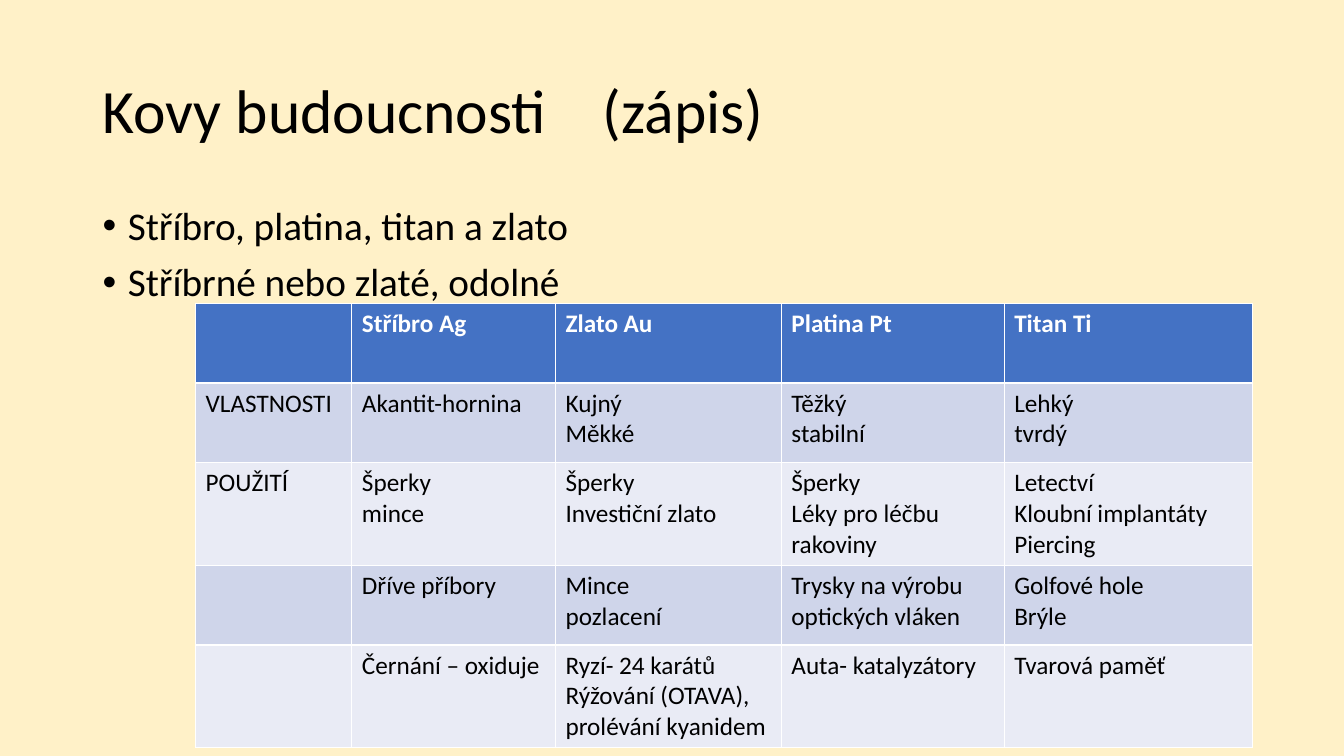
from dataclasses import dataclass

from lxml.etree import SubElement
from pptx import Presentation
from pptx.dml.color import RGBColor
from pptx.enum.text import MSO_ANCHOR
from pptx.oxml.ns import qn
from pptx.util import Inches, Pt

TITLE = "Kovy budoucnosti\t(zápis)"
POINTS = ["Stříbro, platina, titan a zlato", "Stříbrné nebo zlaté, odolné"]
METALS = [
    ["", "Stříbro Ag", "Zlato Au", "Platina Pt", "Titan Ti"],
    ["VLASTNOSTI", "Akantit-hornina", "Kujný\nMěkké", "Těžký\nstabilní", "Lehký\ntvrdý"],
    ["POUŽITÍ", "Šperky\nmince", "Šperky\nInvestiční zlato",
     "Šperky\nLéky pro léčbu rakoviny", "Letectví\nKloubní implantáty\nPiercing"],
    ["", "Dříve příbory", "Mince\npozlacení",
     "Trysky na výrobu optických vláken", "Golfové hole\nBrýle"],
    ["", "Černání – oxiduje", "Ryzí- 24 karátů\nRýžování (OTAVA), prolévání kyanidem",
     "Auta- katalyzátory", "Tvarová paměť"],
]
COLUMNS = [1.55, 2.02, 2.24, 2.21, 2.46]
ROWS = [0.79, 0.79, 1.02, 0.79, 1.02]
TABLE_LEFT, TABLE_TOP = 1.94, 3.01
MARGIN, CONTENT_WIDTH = 0.92, 11.5
INDENT, TITLE_TAB = 0.25, 4.96


@dataclass(frozen=True)
class Theme:
    font: str = "Calibri"
    title: int = 44
    point: int = 28
    cell: int = 18
    background: str = "FFF1C8"
    ink: str = "000000"
    header: str = "4472C4"
    header_ink: str = "FFFFFF"
    bands: tuple = ("E9EBF5", "CFD5EA")


THEME = Theme()


def style(paragraph, size, color, bold=False):
    font = paragraph.font
    font.name, font.size, font.bold = THEME.font, Pt(size), bold
    font.color.rgb = RGBColor.from_string(color)


def add_text(slide, top, height, lines, anchor):
    frame = slide.shapes.add_textbox(
        Inches(MARGIN), Inches(top), Inches(CONTENT_WIDTH), Inches(height)).text_frame
    frame.word_wrap = True
    frame.vertical_anchor = anchor
    frame.text = "\n".join(lines)
    for paragraph in frame.paragraphs:
        paragraph.line_spacing = 0.9
    return frame.paragraphs


def add_title(slide):
    heading = add_text(slide, 0.4, 1.45, [TITLE], MSO_ANCHOR.MIDDLE)[0]
    stops = SubElement(heading._p.get_or_add_pPr(), qn("a:tabLst"))
    SubElement(stops, qn("a:tab"), pos=str(Inches(TITLE_TAB)), algn="l")
    style(heading, THEME.title, THEME.ink)


def add_points(slide):
    for point in add_text(slide, 2, 4.76, POINTS, MSO_ANCHOR.TOP):
        point.space_before = Pt(10)
        properties = point._p.get_or_add_pPr()
        properties.set("marL", str(Inches(INDENT)))
        properties.set("indent", str(-Inches(INDENT)))
        SubElement(properties, qn("a:buFont"), typeface="Arial")
        SubElement(properties, qn("a:buChar"), char="•")
        style(point, THEME.point, THEME.ink)


def add_metals(slide):
    table = slide.shapes.add_table(
        len(ROWS), len(COLUMNS), Inches(TABLE_LEFT), Inches(TABLE_TOP),
        Inches(sum(COLUMNS)), Inches(sum(ROWS))).table
    for column, width in zip(table.columns, COLUMNS):
        column.width = Inches(width)
    for index, (row, height, entries) in enumerate(zip(table.rows, ROWS, METALS)):
        row.height = Inches(height)
        is_header = index == 0
        fill = THEME.header if is_header else THEME.bands[index % 2]
        ink = THEME.header_ink if is_header else THEME.ink
        for cell, entry in zip(row.cells, entries):
            cell.text = entry
            cell.fill.solid()
            cell.fill.fore_color.rgb = RGBColor.from_string(fill)
            for paragraph in cell.text_frame.paragraphs:
                style(paragraph, THEME.cell, ink, is_header)


def main():
    deck = Presentation()
    deck.slide_width, deck.slide_height = Inches(13.33), Inches(7.5)
    slide = deck.slides.add_slide(deck.slide_layouts[6])
    slide.background.fill.solid()
    slide.background.fill.fore_color.rgb = RGBColor.from_string(THEME.background)
    add_title(slide)
    add_points(slide)
    add_metals(slide)
    deck.save("out.pptx")


if __name__ == "__main__":
    main()
